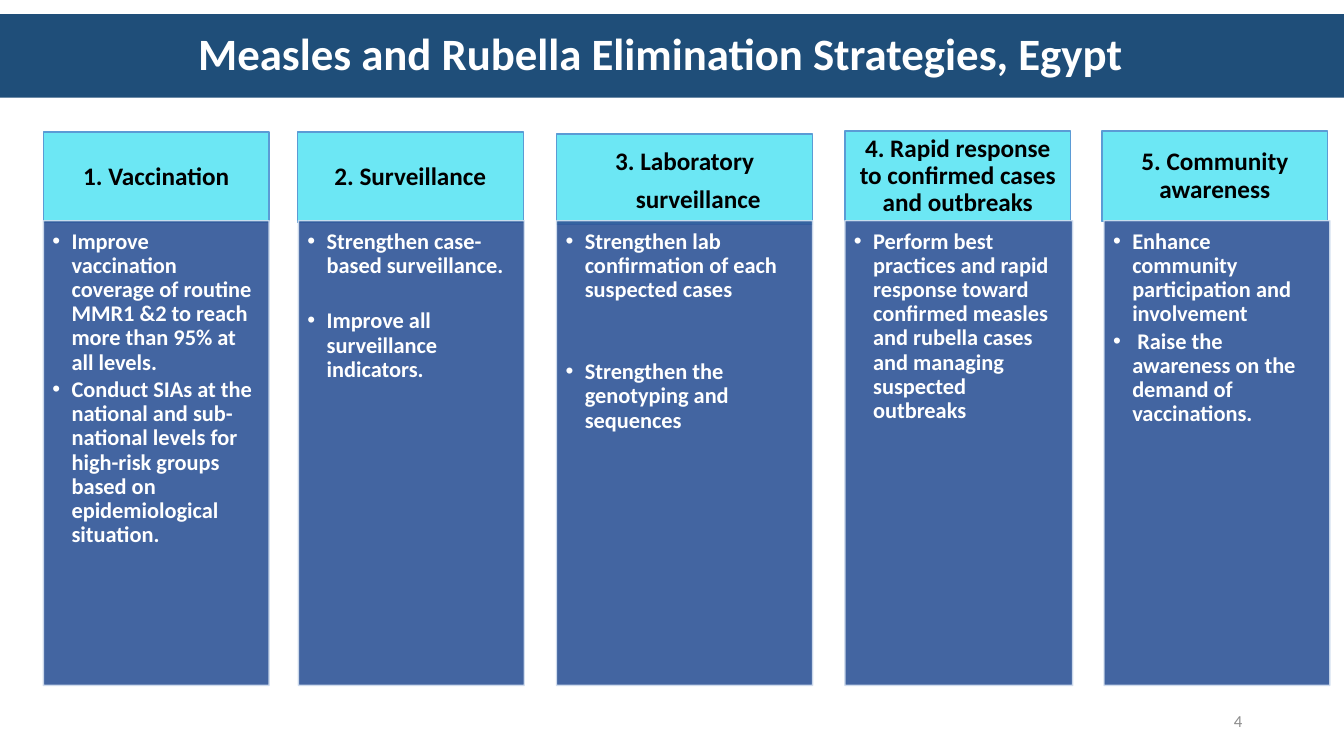
import pptx
import pptx.util
import pptx.dml.color
import pptx.enum.shapes
import pptx.enum.text
import pptx.oxml
from lxml import etree

PX = 9144  # EMU per px, 100 px to the inch
RGB = pptx.dml.color.RGBColor
NAVY = RGB(0x1F, 0x4E, 0x79)
CYAN = RGB(0x6C, 0xE7, 0xF4)
SKY = RGB(0x5B, 0x9B, 0xD5)
BLUE = RGB(0x2F, 0x55, 0x97)
PALE = RGB(0xD2, 0xDE, 0xEF)
GREY = RGB(0x8C, 0x8C, 0x8C)
BLACK = RGB(0, 0, 0)
WHITE = RGB(0xFF, 0xFF, 0xFF)
ALIGN = pptx.enum.text.PP_ALIGN
ANCHOR = pptx.enum.text.MSO_ANCHOR
Pt = pptx.util.Pt

prs = pptx.Presentation()
prs.slide_width, prs.slide_height = 1333 * PX, 750 * PX
s = prs.slides.add_slide(prs.slide_layouts[5])


def setup_frame(tf, insets, anchor):
    tf.word_wrap = True
    tf.auto_size = pptx.enum.text.MSO_AUTO_SIZE.NONE
    tf.vertical_anchor = anchor
    for side, inset in zip(("left", "top", "right", "bottom"), insets):
        setattr(tf, "margin_" + side, inset * PX)


def write(p, text, size, color, bold=True, **layout):
    """Fill one paragraph; layout holds paragraph attributes such as alignment."""
    for name, value in layout.items():
        setattr(p, name, value)
    r = p.add_run()
    r.text = text
    font = {"name": "Calibri", "size": Pt(size), "bold": bold}
    for name, value in font.items():
        setattr(r.font, name, value)
    r.font.color.rgb = color


# Title band
title = s.shapes.title
title.left, title.top, title.width, title.height = 0, 14 * PX, 1333 * PX, 83 * PX
title.fill.solid()
title.fill.fore_color.rgb = NAVY
setup_frame(title.text_frame, (10, 5, 32, 5), ANCHOR.MIDDLE)
write(title.text_frame.paragraphs[0], "Measles and Rubella Elimination Strategies, Egypt",
      32, WHITE, alignment=ALIGN.CENTER, line_spacing=0.9)

# Heading left, top, width; list left, width; heading lines; bullets; gap between bullets in pt
strategies = [
    (43, 131, 224, 43, 224, ["1. Vaccination"],
     ["Improve vaccination coverage of routine MMR1 &2 to reach more than 95% at all levels.",
      "Conduct SIAs at the national and sub-national levels for high-risk groups based on "
      "epidemiological situation."], 0),
    (295, 131, 224, 296, 224, ["2. Surveillance"],
     ["Strengthen case-based surveillance.", "Improve all surveillance indicators."], 20),
    (552, 133, 254, 552, 254, ["3. Laboratory", "surveillance"],
     ["Strengthen lab confirmation of each suspected cases",
      "Strengthen the genotyping and sequences"], 39),
    (838, 130, 224, 838, 226, ["4. Rapid response to confirmed cases and outbreaks"],
     ["Perform best practices and rapid response toward confirmed measles and rubella cases "
      "and managing suspected outbreaks"], 0),
    (1093, 130, 224, 1095, 224, ["5. Community awareness"],
     ["Enhance community participation and involvement",
      " Raise the awareness on the demand of vaccinations."], 0),
]

for left, top, width, list_left, list_width, heading, bullets, gap in strategies:
    boxes = [
        (left, top, width, 90, CYAN, SKY, (14, 8, 14, 8), ANCHOR.MIDDLE),
        (list_left, 219, list_width, 461, BLUE, PALE, (9, 9, 12, 14), ANCHOR.TOP),
    ]
    frames = []
    for x, y, w, h, fill, line, insets, anchor in boxes:
        sp = s.shapes.add_shape(pptx.enum.shapes.MSO_SHAPE.RECTANGLE,
                                x * PX, y * PX, w * PX, h * PX)
        sp.shadow.inherit = False
        sp.fill.solid()
        sp.fill.fore_color.rgb = fill
        sp.line.color.rgb = line
        sp.line.width = Pt(1)
        setup_frame(sp.text_frame, insets, anchor)
        frames.append(sp.text_frame)

    # The list box is slightly see-through
    for clr in sp._element.spPr.iter(pptx.oxml.ns.qn("a:srgbClr")):
        etree.SubElement(clr, pptx.oxml.ns.qn("a:alpha"), val="90000")

    head_tf, list_tf = frames
    for i, text in enumerate(heading):
        p = head_tf.paragraphs[0] if i == 0 else head_tf.add_paragraph()
        write(p, text, 18, BLACK, alignment=ALIGN.CENTER, space_after=Pt(6),
              line_spacing=0.9 if len(heading) == 1 else 1.0)
        if i:
            p._p.get_or_add_pPr().set("marL", str(27 * PX))

    for i, text in enumerate(bullets):
        p = list_tf.paragraphs[0] if i == 0 else list_tf.add_paragraph()
        write(p, text, 16, WHITE, alignment=ALIGN.LEFT, line_spacing=0.9,
              space_before=Pt(gap if i else 0), space_after=Pt(2.4))
        pPr = p._p.get_or_add_pPr()
        pPr.set("marL", str(19 * PX))
        pPr.set("indent", str(-19 * PX))
        etree.SubElement(pPr, pptx.oxml.ns.qn("a:buFont"), typeface="Arial")
        etree.SubElement(pPr, pptx.oxml.ns.qn("a:buChar"), char="•")

# Slide number
number = s.shapes.add_textbox(942 * PX, 695 * PX, 300 * PX, 40 * PX)
setup_frame(number.text_frame, (10, 5, 10, 5), ANCHOR.MIDDLE)
write(number.text_frame.paragraphs[0], "4", 12, GREY, bold=False, alignment=ALIGN.RIGHT)

prs.save("out.pptx")
